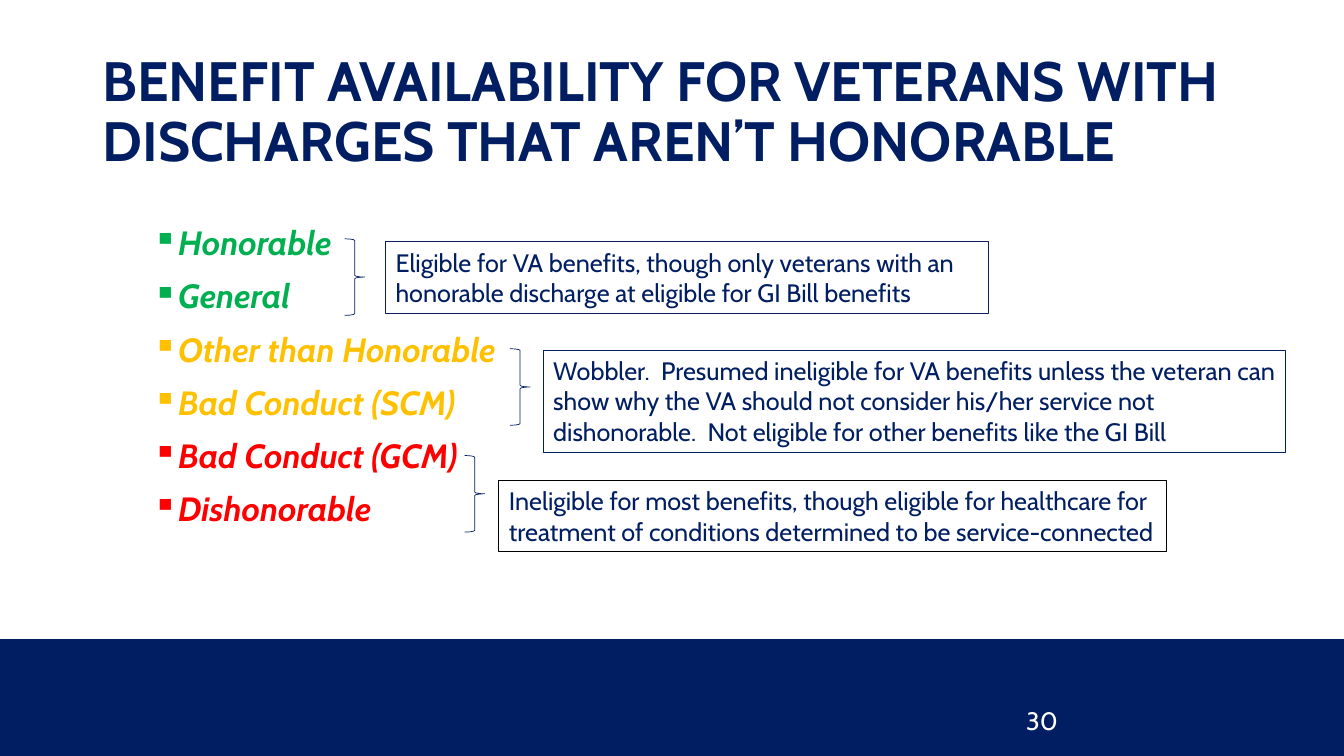
from dataclasses import dataclass

from lxml import etree
from pptx import Presentation
from pptx.dml.color import RGBColor
from pptx.enum.shapes import MSO_SHAPE
from pptx.enum.text import MSO_ANCHOR, PP_ALIGN
from pptx.oxml.ns import qn
from pptx.util import Pt

RECT, BRACE = MSO_SHAPE.RECTANGLE, MSO_SHAPE.RIGHT_BRACE
TOP, MIDDLE = MSO_ANCHOR.TOP, MSO_ANCHOR.MIDDLE
LEFT = PP_ALIGN.LEFT


@dataclass(frozen=True)
class Theme:
    font: str = "Cabin"
    navy: str = "001E61"
    navy_alt: str = "0E1D61"
    black: str = "000000"
    white: str = "FFFFFF"
    green: str = "00B050"
    amber: str = "FFC000"
    red: str = "FF0000"
    title_size: float = 39.6
    list_size: float = 24
    note_size: float = 18


T = Theme()
WIDTH, HEIGHT = 960, 540
BRACE_SIZE = (14.4, 54.7)

# Discharge names, their colour, brace corner, note box, note outline, note text
GROUPS = [
    (("Honorable", "General"), T.green, (246.2, 170.6), (275.5, 172.8, 430.8, 50.9), T.navy_alt,
     "Eligible for VA benefits, though only veterans with an honorable discharge "
     "at eligible for GI Bill benefits"),
    (("Other than Honorable", "Bad Conduct (SCM)"), T.amber, (364.3, 249.1),
     (388.1, 250.3, 530, 72.7), T.navy,
     "Wobbler.  Presumed ineligible for VA benefits unless the veteran can show why the VA "
     "should not consider his/her service not dishonorable.  Not eligible for other benefits "
     "like the GI Bill"),
    (("Bad Conduct (GCM)", "Dishonorable"), T.red, (331.9, 325.4),
     (356.4, 343.4, 476.6, 50.9), T.black,
     "Ineligible for most benefits, though eligible for healthcare for treatment of conditions "
     "determined to be service-connected"),
]


def add_run(p, text, size, color, bold=False, italic=False):
    r = p.add_run()
    r.text = text
    font = r.font
    font.name, font.size, font.bold, font.italic = T.font, Pt(size), bold, italic
    font.color.rgb = RGBColor.from_string(color)


def add_text_box(s, box, anchor=TOP):
    tf = s.shapes.add_textbox(*map(Pt, box)).text_frame
    tf.word_wrap = True
    tf.vertical_anchor = anchor
    return tf


def add_shape(s, kind, box, fill=None, line=None, weight=0.75):
    sp = s.shapes.add_shape(kind, *map(Pt, box))
    sp.shadow.inherit = False
    if fill:
        sp.fill.solid()
        sp.fill.fore_color.rgb = RGBColor.from_string(fill)
    else:
        sp.fill.background()
    if line:
        sp.line.color.rgb = RGBColor.from_string(line)
        sp.line.width = Pt(weight)
    else:
        sp.line.fill.background()
    return sp


def add_square_bullet(p):
    pPr = p._p.get_or_add_pPr()
    pPr.set("marL", str(Pt(54)))
    pPr.set("indent", str(Pt(-18)))
    etree.SubElement(pPr, qn("a:buChar")).set("char", "▪")


def add_title(s, box):
    p = add_text_box(s, box, MIDDLE).paragraphs[0]
    p.line_spacing = 0.9
    add_run(p, "BENEFIT AVAILABILITY FOR VETERANS WITH DISCHARGES THAT AREN’T HONORABLE",
            T.title_size, T.navy, bold=True)


def add_discharge_list(s, box):
    tf = add_text_box(s, box)
    entries = [(name, color) for names, color, *_ in GROUPS for name in names]
    for i, (name, color) in enumerate(entries):
        p = tf.paragraphs[0] if i == 0 else tf.add_paragraph()
        add_square_bullet(p)
        p.line_spacing = 0.9
        p.space_before = Pt(12 if i else 0)
        add_run(p, name, T.list_size, color, bold=True, italic=True)


def add_note(s, box, outline, text):
    tf = add_shape(s, RECT, box, line=outline).text_frame
    tf.word_wrap = True
    tf.vertical_anchor = TOP
    p = tf.paragraphs[0]
    p.alignment = LEFT
    add_run(p, text, T.note_size, T.navy)


def add_footer(s, box):
    """Draw the bottom band and the slide number inside it."""
    left, top, width, height = box
    add_shape(s, RECT, box, fill=T.navy)
    tf = add_text_box(s, (left + 725.8, top + 43.9, 216, 28.8))
    add_run(tf.paragraphs[0], "30", T.note_size, T.white)


def main():
    prs = Presentation()
    prs.slide_width, prs.slide_height = Pt(WIDTH), Pt(HEIGHT)
    s = prs.slides.add_slide(prs.slide_layouts[6])
    add_footer(s, (0, 456.5, WIDTH, HEIGHT - 456.5))
    add_title(s, (66.2, 28.8, 828, 104.4))
    add_discharge_list(s, (66.2, 158.5, 828, 264))
    for _, _, corner, note_box, outline, text in GROUPS:
        add_shape(s, BRACE, corner + BRACE_SIZE, line=T.navy, weight=0.5)
        add_note(s, note_box, outline, text)
    prs.save("out.pptx")


if __name__ == "__main__":
    main()
